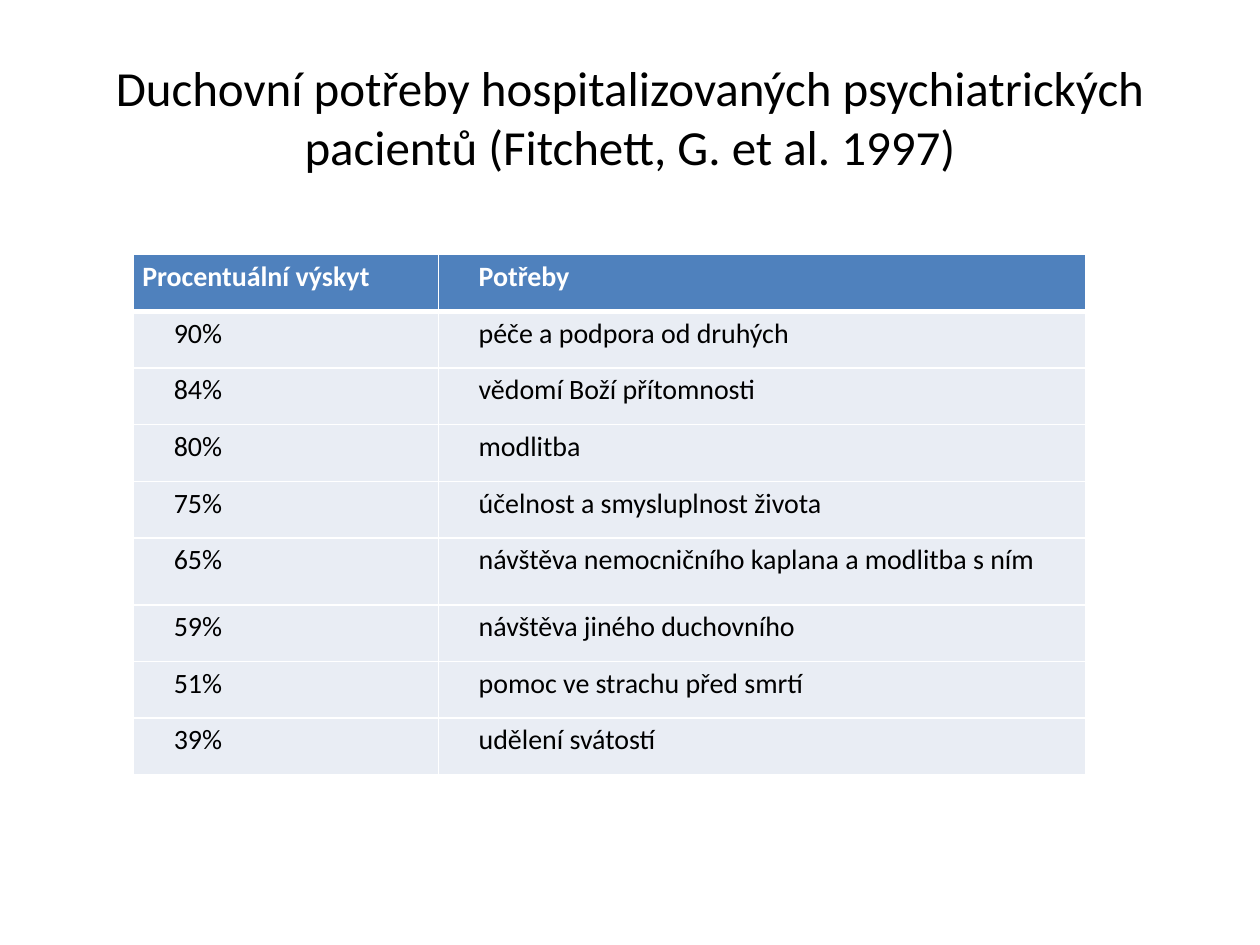
import pptx
import pptx.dml.color
import pptx.enum.text
import pptx.oxml.ns
import pptx.util
from lxml import etree
from pptx.util import Inches

COLORS = {
    "text": "000000",
    "header": "4F81BD",
    "body": "E9EDF4",
    "white": "FFFFFF",
}
FONT = "Calibri"
TITLE = "Duchovní potřeby hospitalizovaných psychiatrických pacientů (Fitchett, G. et al. 1997)"
HEADERS = ("Procentuální výskyt", "Potřeby")
NEEDS = [
    ("90%", "péče a podpora od druhých"),
    ("84%", "vědomí Boží přítomnosti"),
    ("80%", "modlitba"),
    ("75%", "účelnost a smysluplnost života"),
    ("65%", "návštěva nemocničního kaplana a modlitba s ním"),
    ("59%", "návštěva jiného duchovního"),
    ("51%", "pomoc ve strachu před smrtí"),
    ("39%", "udělení svátostí"),
]
COLUMN_WIDTHS = (2.42, 5.14)
ROW_HEIGHT = 0.45
TALL_ROW, TALL_HEIGHT = 5, 0.53
INDENT = 0.25


def rgb(name):
    return pptx.dml.color.RGBColor.from_string(COLORS[name])


def write_text(frame, text, size=16, color="text", bold=False, align=None,
               spacing=None, indent=0):
    para = frame.paragraphs[0]
    para.alignment = align
    para.line_spacing = spacing
    if indent:
        properties = para._p.get_or_add_pPr()
        properties.set("marL", str(Inches(indent)))
        properties.set("indent", "0")
    span = para.add_run()
    span.text = text
    span.font.name = FONT
    span.font.size = pptx.util.Pt(size)
    span.font.bold = bold
    span.font.color.rgb = rgb(color)


def set_borders(cell, bottom):
    """Draw white cell edges; bottom is the lower edge's width in points."""
    properties = cell._tc.get_or_add_tcPr()
    qn = pptx.oxml.ns.qn
    for side, width in (("L", 1), ("R", 1), ("T", 1), ("B", bottom)):
        line = etree.SubElement(properties, qn(f"a:ln{side}"), w=str(pptx.util.Pt(width)))
        fill = etree.SubElement(line, qn("a:solidFill"))
        etree.SubElement(fill, qn("a:srgbClr"), val=COLORS["white"])


def format_cell(cell, fill, bottom):
    cell.margin_left = cell.margin_right = Inches(0.07)
    cell.margin_top = cell.margin_bottom = 0
    set_borders(cell, bottom)
    cell.fill.solid()
    cell.fill.fore_color.rgb = rgb(fill)


def add_title(page):
    title = page.shapes.title
    title.left, title.top = Inches(0.5), Inches(0.3)
    title.width, title.height = Inches(9), Inches(1.25)
    title.text_frame.vertical_anchor = pptx.enum.text.MSO_ANCHOR.MIDDLE
    write_text(title.text_frame, TITLE, size=28, align=pptx.enum.text.PP_ALIGN.CENTER)


def add_needs_table(page):
    rows = [HEADERS, *NEEDS]
    heights = [TALL_HEIGHT if i == TALL_ROW else ROW_HEIGHT for i in range(len(rows))]
    table = page.shapes.add_table(
        len(rows), len(COLUMN_WIDTHS), Inches(1.06), Inches(2.02),
        Inches(sum(COLUMN_WIDTHS)), Inches(sum(heights))).table
    for column, width in zip(table.columns, COLUMN_WIDTHS):
        column.width = Inches(width)
    for i, (texts, height) in enumerate(zip(rows, heights)):
        table.rows[i].height = Inches(height)
        header = i == 0
        for j, text in enumerate(texts):
            cell = table.cell(i, j)
            format_cell(cell, "header" if header else "body", 3 if header else 1)
            write_text(cell.text_frame, text, bold=header, spacing=1.15,
                       color="white" if header else "text",
                       indent=0 if header and j == 0 else INDENT)


def main():
    deck = pptx.Presentation()
    deck.slide_width, deck.slide_height = Inches(10), Inches(7.5)
    page = deck.slides.add_slide(deck.slide_layouts[5])
    add_title(page)
    add_needs_table(page)
    deck.save("out.pptx")


if __name__ == "__main__":
    main()
